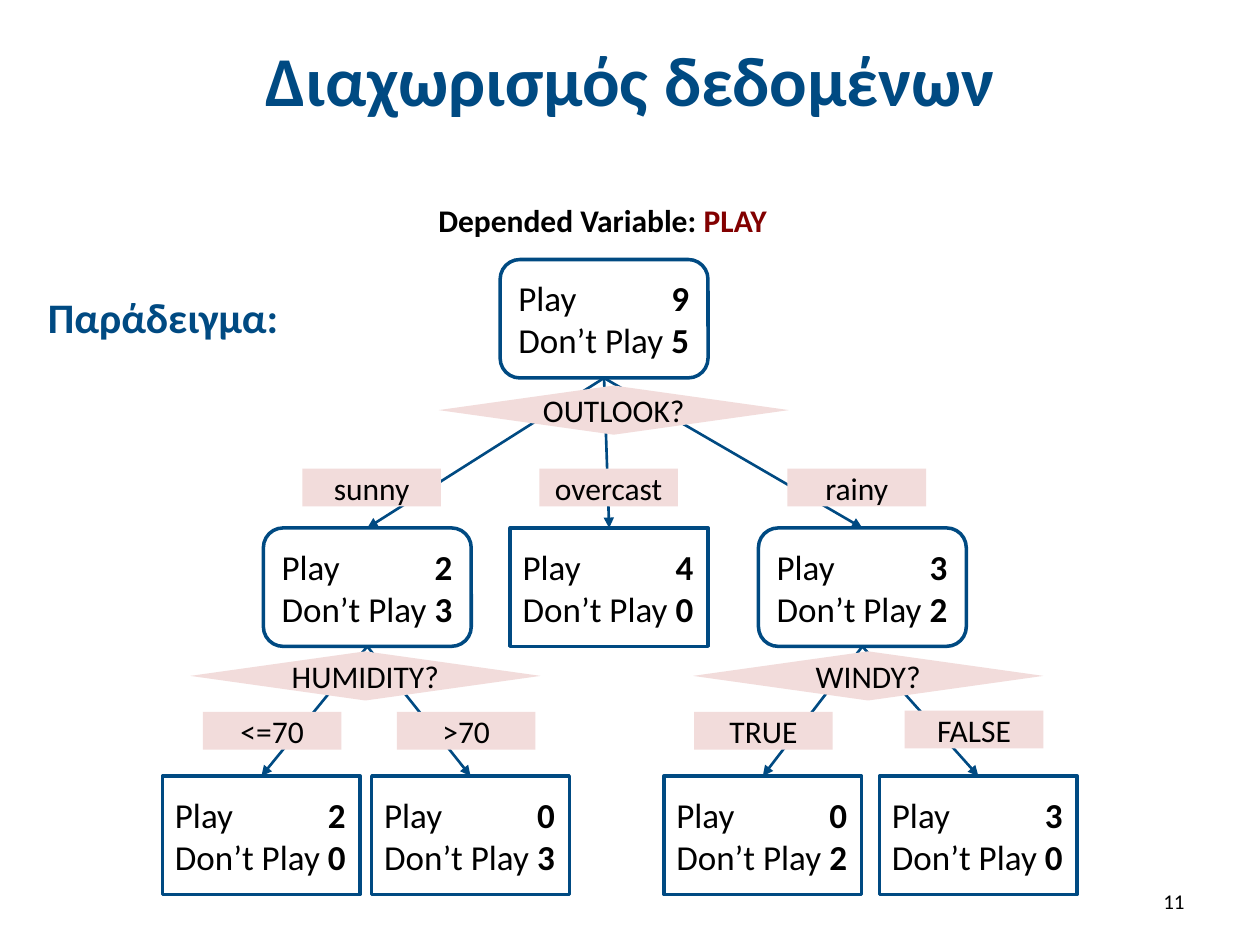
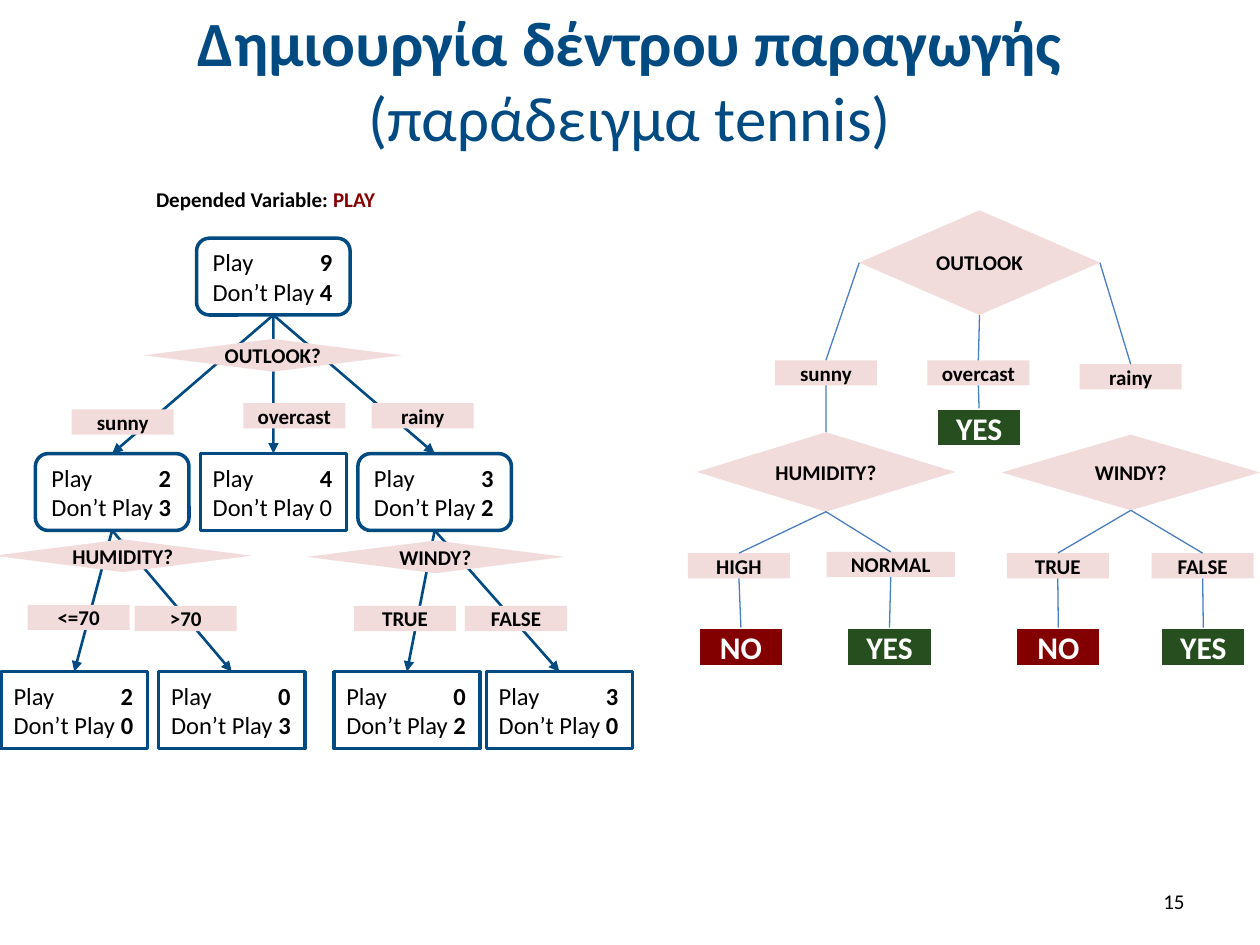
"""Build two slides that show decision trees for the variable PLAY."""
from lxml import etree
from pptx import Presentation
from pptx.dml.color import RGBColor
from pptx.enum.shapes import MSO_CONNECTOR, MSO_SHAPE
from pptx.enum.text import MSO_ANCHOR, MSO_AUTO_SIZE, PP_ALIGN
from pptx.oxml.ns import qn
from pptx.util import Pt

RECTANGLE, ROUNDED, DIAMOND = MSO_SHAPE.RECTANGLE, MSO_SHAPE.ROUNDED_RECTANGLE, MSO_SHAPE.DIAMOND
STRAIGHT = MSO_CONNECTOR.STRAIGHT
LEFT, CENTER, RIGHT = PP_ALIGN.LEFT, PP_ALIGN.CENTER, PP_ALIGN.RIGHT
TOP_ANCHOR, MIDDLE = MSO_ANCHOR.TOP, MSO_ANCHOR.MIDDLE
NO_AUTOFIT = MSO_AUTO_SIZE.NONE
TOP, LEFT_SIDE, BOTTOM, RIGHT_SIDE = 0, 1, 2, 3

FONT = "Calibri"
COLORS = {
    "navy": "004A82",
    "blue": "4B7EBC",
    "pink": "F2DCDB",
    "maroon": "820000",
    "green": "274E1E",
    "black": "000000",
    "white": "FFFFFF",
}
DIGIT_TAB = 4.88

FRAME = {"auto_size": NO_AUTOFIT, "word_wrap": True, "vertical_anchor": MIDDLE}
TIGHT = {**FRAME, "word_wrap": False, "margin_left": 0, "margin_right": 0,
         "margin_top": 0, "margin_bottom": 0}
STYLES = {
    "title": {"frame": FRAME, "align": CENTER, "color": "navy"},
    "body": {"frame": {**FRAME, "vertical_anchor": TOP_ANCHOR}, "align": LEFT,
             "color": "navy", "size": 24, "plain": True},
    "number": {"frame": FRAME, "align": RIGHT, "color": "black", "size": 12},
    "caption": {"frame": {**FRAME, "vertical_anchor": TOP_ANCHOR, "margin_right": 0},
                "align": LEFT, "color": "black"},
    "inner": {"geometry": ROUNDED, "frame": {**FRAME, "margin_right": 0}, "align": LEFT,
              "color": "black", "line": "navy", "tab": True},
    "label": {"geometry": RECTANGLE, "frame": TIGHT, "align": CENTER,
              "color": "black", "fill": "pink"},
    "yes": {"geometry": RECTANGLE, "frame": TIGHT, "align": CENTER, "color": "white",
            "fill": "green", "line": "white", "size": 18},
}
STYLES["leaf"] = {**STYLES["inner"], "geometry": RECTANGLE}
STYLES["question"] = {**STYLES["label"], "geometry": DIAMOND}
STYLES["no"] = {**STYLES["yes"], "fill": "maroon"}


def add_text(slide, style, box, lines, size=None, placeholder=None):
    """Place a shape; each line is a list of (text, bold[, color]) runs."""
    style = STYLES[style]
    size = style.get("size", size)
    lengths = [Pt(value) for value in box]
    if placeholder is not None:
        shape = placeholder
        shape.left, shape.top, shape.width, shape.height = lengths
    elif "geometry" in style:
        shape = slide.shapes.add_shape(style["geometry"], *lengths)
        shape.shadow.inherit = False
        if "fill" in style:
            shape.fill.solid()
            shape.fill.fore_color.rgb = RGBColor.from_string(COLORS[style["fill"]])
        else:
            shape.fill.background()
        if "line" in style:
            shape.line.color.rgb = RGBColor.from_string(COLORS[style["line"]])
            shape.line.width = Pt(2)
        else:
            shape.line.fill.background()
    else:
        shape = slide.shapes.add_textbox(*lengths)
    text_frame = shape.text_frame
    for name, value in style["frame"].items():
        setattr(text_frame, name, value)
    for index, runs in enumerate(lines):
        paragraph = text_frame.add_paragraph() if index else text_frame.paragraphs[0]
        properties = paragraph._p.get_or_add_pPr()
        if style.get("plain"):
            properties.set("marL", "0")
            properties.set("indent", "0")
            etree.SubElement(properties, qn("a:buNone"))
        if style.get("tab"):
            tabs = etree.SubElement(properties, qn("a:tabLst"))
            etree.SubElement(tabs, qn("a:tab"), pos=str(Pt(DIGIT_TAB * size)), algn="r")
        paragraph.alignment = style["align"]
        paragraph.space_before = Pt(0)
        for text, bold, *color in runs:
            run = paragraph.add_run()
            run.text = text
            values = {"name": FONT, "size": Pt(size), "bold": bold}
            for name, value in values.items():
                setattr(run.font, name, value)
            run.font.color.rgb = RGBColor.from_string(COLORS[color[0] if color else style["color"]])
    return shape


def connect(slide, start, end, color, width, start_side=BOTTOM, arrow=False):
    """Join a side of one shape to the top of another."""
    connector = slide.shapes.add_connector(STRAIGHT, 0, 0, 0, 0)
    connector.begin_connect(start, start_side)
    connector.end_connect(end, TOP)
    connector.line.color.rgb = RGBColor.from_string(COLORS[color])
    connector.line.width = Pt(width)
    properties = connector._element.spPr
    if arrow:
        etree.SubElement(properties.find(qn("a:ln")), qn("a:tailEnd"), type="triangle")
    etree.SubElement(properties, qn("a:effectLst"))


NODES = [
    ("root", "inner", 0, None),
    ("sunny", "inner", 1, "root"),
    ("rainy", "inner", 1, "root"),
    ("overcast", "leaf", 1, "root"),
    ("low humidity", "leaf", 2, "sunny"),
    ("high humidity", "leaf", 2, "sunny"),
    ("windy", "leaf", 2, "rainy"),
    ("calm", "leaf", 2, "rainy"),
]
COUNTS = {"root": "95", "sunny": "23", "rainy": "32", "overcast": "40",
          "low humidity": "20", "high humidity": "03", "windy": "02", "calm": "30"}

SLIDES = [
    {
        "layout": 1,
        "title": [[("Διαχωρισμός δεδομένων", True)]],
        "title size": 40,
        "number": "11",
        "caption": (243.4, 111.6, 203.8, 28.8),
        "node size": 20,
        "label size": 18,
        "label bold": False,
        "counts": COUNTS,
        "plain zero": None,
        "rows": [148.3, 301.7, 443.5],
        "lefts": [285.8, 150.5, 433.4, 291.6, 92.9, 212.4, 379.4, 502.6],
        "sizes": {"inner": (118.8, 67.7), "leaf": (113, 67.7),
                  "question": (200.2, 28.1), "label": (79.2, 21.6)},
        "labels": [
            ("question", "OUTLOOK?", 250.6, 220.3),
            ("label", "overcast", 308.2, 267.8),
            ("label", "sunny", 172.8, 267.8),
            ("label", "rainy", 450, 267.8),
            ("question", "HUMIDITY?", 108.7, 372.2),
            ("question", "WINDY?", 396, 372.2),
            ("label", "TRUE", 396.7, 406.8),
            ("label", "FALSE", 517, 406.1),
            ("label", "<=70", 115.9, 406.8),
            ("label", ">70", 226.8, 406.8),
        ],
    },
    {
        "layout": 5,
        "title": [[("Δημιουργία δέντρου παραγωγής", True)], [("(παράδειγμα tennis)", False)]],
        "title size": 36,
        "number": "15",
        "caption": (82.1, 103, 150.5, 21.6),
        "node size": 14,
        "label size": 12,
        "label bold": True,
        "counts": {**COUNTS, "root": "94"},
        "plain zero": "overcast",
        "rows": [136.1, 259.2, 383.8],
        "lefts": [112.3, 20.2, 204.5, 114.5, 0.7, 90.7, 190.8, 277.9],
        "sizes": {"inner": (87.8, 43.9), "leaf": (83.5, 43.9),
                  "question": (147.6, 18.7), "label": (58.3, 14.4)},
        "labels": [
            ("question", "OUTLOOK?", 82.1, 193.7),
            ("label", "overcast", 139, 230.4),
            ("label", "sunny", 41, 234),
            ("label", "rainy", 212.4, 230.4),
            ("question", "HUMIDITY?", -3.6, 308.2),
            ("question", "WINDY?", 175, 308.9),
            ("label", "TRUE", 202.3, 346.3),
            ("label", "FALSE", 265.7, 346.3),
            ("label", "<=70", 15.8, 345.6),
            ("label", ">70", 77, 346.3),
        ],
    },
]

presentation = Presentation()
presentation.slide_width, presentation.slide_height = Pt(720), Pt(540)

for content in SLIDES:
    slide = presentation.slides.add_slide(presentation.slide_layouts[content["layout"]])
    add_text(slide, "title", (0, 9.4, 720, 71.3), content["title"],
             content["title size"], slide.shapes.title)
    if content["layout"] == 1:
        add_text(slide, "body", (20.2, 162.7, 175.7, 39.6), [[("Παράδειγμα:", True)]],
                 placeholder=slide.placeholders[1])
    add_text(slide, "number", (516.2, 500.4, 167.8, 28.8), [[(content["number"], False)]])

    shapes = {}
    for (name, style, row, parent), left in zip(NODES, content["lefts"]):
        play, rest = content["counts"][name]
        lines = [[("Play\t", False), (play, True)],
                 [("Don’t Play ", False), (rest, name != content["plain zero"])]]
        box = (left, content["rows"][row], *content["sizes"][style])
        shapes[name] = add_text(slide, style, box, lines, content["node size"])
    for name, style, row, parent in NODES:
        if parent:
            connect(slide, shapes[parent], shapes[name], "navy", 1.5, arrow=True)

    for style, text, left, top in content["labels"]:
        add_text(slide, style, (left, top, *content["sizes"][style]),
                 [[(text, content["label bold"])]], content["label size"])
    add_text(slide, "caption", content["caption"],
             [[("Depended Variable: ", True), ("PLAY", True, "maroon")]], content["label size"])

LABEL, ANSWER = (58.3, 14.4), (49, 22.3)
DECISIONS = [
    ("outlook", "question", "OUTLOOK", (491, 120.2, 137.5, 59.8), None, None),
    ("sunny", "label", "sunny", (442.8, 205.9, *LABEL), "outlook", LEFT_SIDE),
    ("overcast", "label", "overcast", (529.9, 205.9, *LABEL), "outlook", BOTTOM),
    ("rainy", "label", "rainy", (617, 208.1, *LABEL), "outlook", RIGHT_SIDE),
    ("humidity", "question", "HUMIDITY?", (398.2, 247, 147.6, 45.4), "sunny", BOTTOM),
    ("windy", "question", "WINDY?", (572.4, 248.4, 147.6, 43.2), None, None),
    ("high", "label", "HIGH", (393.1, 316.1, *LABEL), "humidity", BOTTOM),
    ("normal", "label", "NORMAL", (472.3, 315.4, 73.4, 14.4), "humidity", BOTTOM),
    ("true", "label", "TRUE", (575.3, 316.1, *LABEL), "windy", BOTTOM),
    ("false", "label", "FALSE", (658.1, 316.1, *LABEL), "windy", BOTTOM),
    ("overcast answer", "yes", "YES", (535, 233.3, *ANSWER), "overcast", BOTTOM),
    ("high answer", "no", "NO", (398.9, 358.6, *ANSWER), "high", BOTTOM),
    ("normal answer", "yes", "YES", (483.8, 358.6, *ANSWER), "normal", BOTTOM),
    ("true answer", "no", "NO", (580.3, 358.6, *ANSWER), "true", BOTTOM),
    ("false answer", "yes", "YES", (663.1, 358.6, *ANSWER), "false", BOTTOM),
]
decisions = {}
for name, style, text, box, parent, side in DECISIONS:
    decisions[name] = add_text(slide, style, box, [[(text, True)]], 12)
    if parent:
        connect(slide, decisions[parent], decisions[name], "blue", 0.75, side)

presentation.save("out.pptx")
